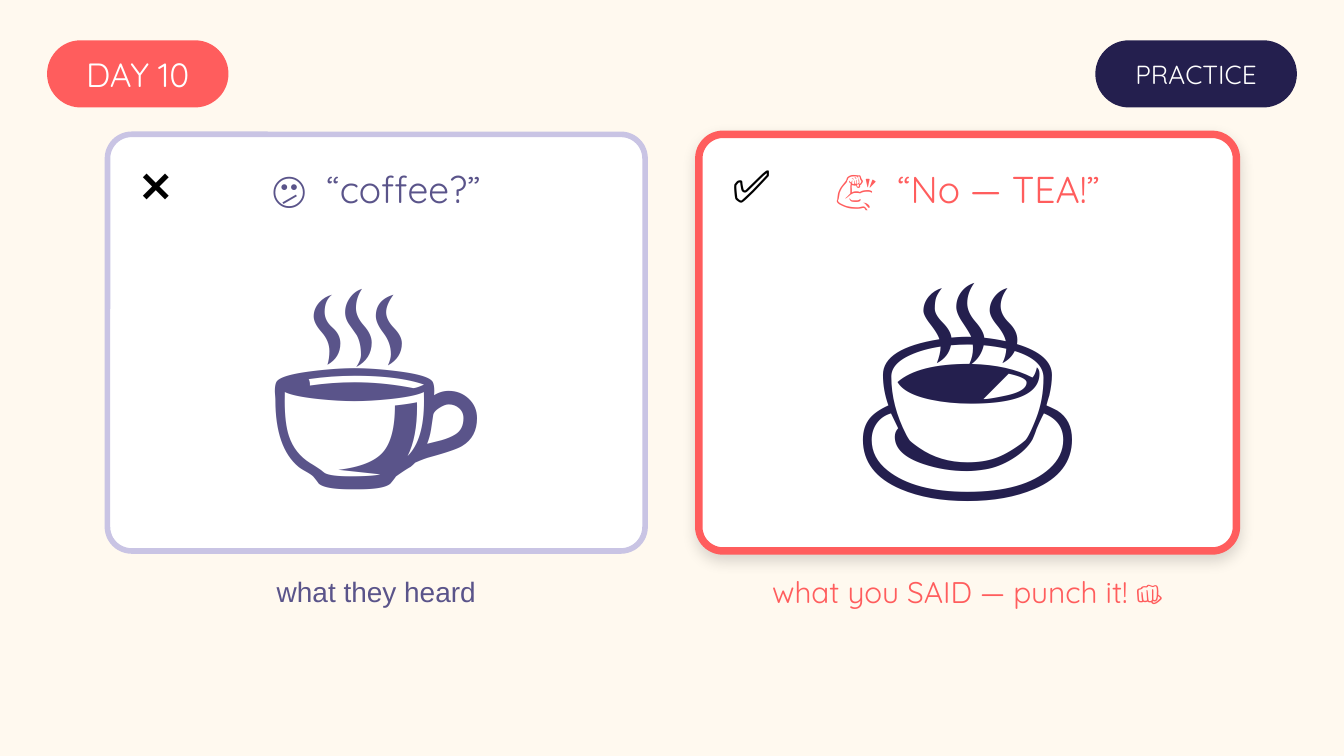
from lxml import etree
from pptx import Presentation
from pptx.dml.color import RGBColor
from pptx.enum import shapes, text
from pptx.oxml import ns
from pptx.util import Inches, Pt

CREAM = RGBColor(0xFF, 0xF9, 0xEF)
CORAL = RGBColor(0xFF, 0x5D, 0x5D)
NAVY = RGBColor(0x24, 0x1F, 0x4E)
PURPLE = RGBColor(0x5A, 0x54, 0x8A)
LILAC = RGBColor(0xC9, 0xC4, 0xE4)
WHITE = RGBColor(0xFF, 0xFF, 0xFF)
BLACK = RGBColor(0, 0, 0)

SLIDE_WIDTH = 10
PILL_TOP, PILL_HEIGHT = 0.3, 0.5
CARD_LEFT, CARD_TOP, CARD_WIDTH, CARD_HEIGHT = 0.8, 1, 4, 3.1
CARD_STEP = 4.4

CARDS = [
    {"heading": "😕  “coffee?”", "accent": PURPLE, "border": LILAC, "border_width": 3,
     "drink": "☕", "drink_color": PURPLE, "mark": "❌", "raised": False,
     "caption": "what they heard", "caption_size": 15, "caption_font": "Arial"},
    {"heading": "💪  “No — TEA!”", "accent": CORAL, "border": CORAL, "border_width": 4,
     "drink": "🍵", "drink_color": NAVY, "mark": "✅", "raised": True,
     "caption": "what you SAID — punch it! 👊", "caption_size": 16,
     "caption_font": "Quicksand"},
]


def write_text(shape, words, size, color, font="Quicksand",
               align=text.PP_ALIGN.CENTER, anchor=text.MSO_ANCHOR.MIDDLE, inset=None):
    frame = shape.text_frame
    frame.text = words
    frame_format = {"word_wrap": True, "auto_size": text.MSO_AUTO_SIZE.NONE,
                    "vertical_anchor": anchor}
    if inset is not None:
        for side in ("left", "right", "top", "bottom"):
            frame_format[f"margin_{side}"] = Inches(inset)
    for name, value in frame_format.items():
        setattr(frame, name, value)
    paragraph = frame.paragraphs[0]
    paragraph.alignment = align
    run_font = paragraph.runs[0].font
    for name, value in {"size": Pt(size), "name": font}.items():
        setattr(run_font, name, value)
    run_font.color.rgb = color


def add_label(slide, box, words, size, color, **options):
    shape = slide.shapes.add_textbox(*map(Inches, box))
    write_text(shape, words, size, color, **options)


def add_rounded(slide, box, fill, radius):
    shape = slide.shapes.add_shape(
        shapes.MSO_SHAPE.ROUNDED_RECTANGLE, *map(Inches, box))
    shape.adjustments[0] = radius
    shape.shadow.inherit = False
    shape.fill.solid()
    shape.fill.fore_color.rgb = fill
    shape.line.fill.background()
    return shape


def add_soft_shadow(shape):
    effects = shape.element.spPr.find(ns.qn("a:effectLst"))
    shadow = etree.SubElement(
        effects, ns.qn("a:outerShdw"), blurRad=str(Pt(8)), dist=str(Pt(3)),
        dir=str(90 * 60000), algn="ctr", rotWithShape="0")
    color = etree.SubElement(shadow, ns.qn("a:srgbClr"), val=str(BLACK))
    etree.SubElement(color, ns.qn("a:alpha"), val="15000")


def add_day_title(slide):
    box = (0.35, PILL_TOP, 1.35, PILL_HEIGHT)
    add_rounded(slide, box, CORAL, 0.5)
    title = slide.shapes.title
    for name, value in zip(("left", "top", "width", "height"), box):
        setattr(title, name, Inches(value))
    write_text(title, "DAY 10", 18, WHITE, inset=0)
    title.element.getparent().append(title.element)


def add_practice_tag(slide):
    box = (8.15, PILL_TOP, 1.5, PILL_HEIGHT)
    add_rounded(slide, box, NAVY, 0.5)
    add_label(slide, box, "PRACTICE", 14, WHITE, inset=0)


def add_card(slide, left, card):
    panel = add_rounded(slide, (left, CARD_TOP, CARD_WIDTH, CARD_HEIGHT), WHITE, 0.058)
    panel.line.color.rgb = card["border"]
    panel.line.width = Pt(card["border_width"])
    if card["raised"]:
        add_soft_shadow(panel)
    add_label(slide, (left, 1.15, CARD_WIDTH, 0.5), card["heading"], 20, card["accent"])
    add_label(slide, (left, 1.7, CARD_WIDTH, 1.8), card["drink"], 119,
              card["drink_color"], anchor=text.MSO_ANCHOR.TOP)
    add_label(slide, (left + 0.15, 1.12, 0.6, 0.5), card["mark"], 24, BLACK,
              font="Calibri", align=text.PP_ALIGN.LEFT)


def add_caption(slide, left, card):
    add_label(slide, (left, 4.2, CARD_WIDTH, 0.4), card["caption"],
              card["caption_size"], card["accent"], font=card["caption_font"])


def main():
    presentation = Presentation()
    presentation.slide_width = Inches(SLIDE_WIDTH)
    presentation.slide_height = Inches(SLIDE_WIDTH * 9 / 16)
    slide = presentation.slides.add_slide(presentation.slide_layouts.get_by_name("Title Only"))
    slide.background.fill.solid()
    slide.background.fill.fore_color.rgb = CREAM
    add_day_title(slide)
    add_practice_tag(slide)
    for add_part in (add_card, add_caption):
        for index, card in enumerate(CARDS):
            add_part(slide, CARD_LEFT + index * CARD_STEP, card)
    presentation.save("out.pptx")


if __name__ == "__main__":
    main()
